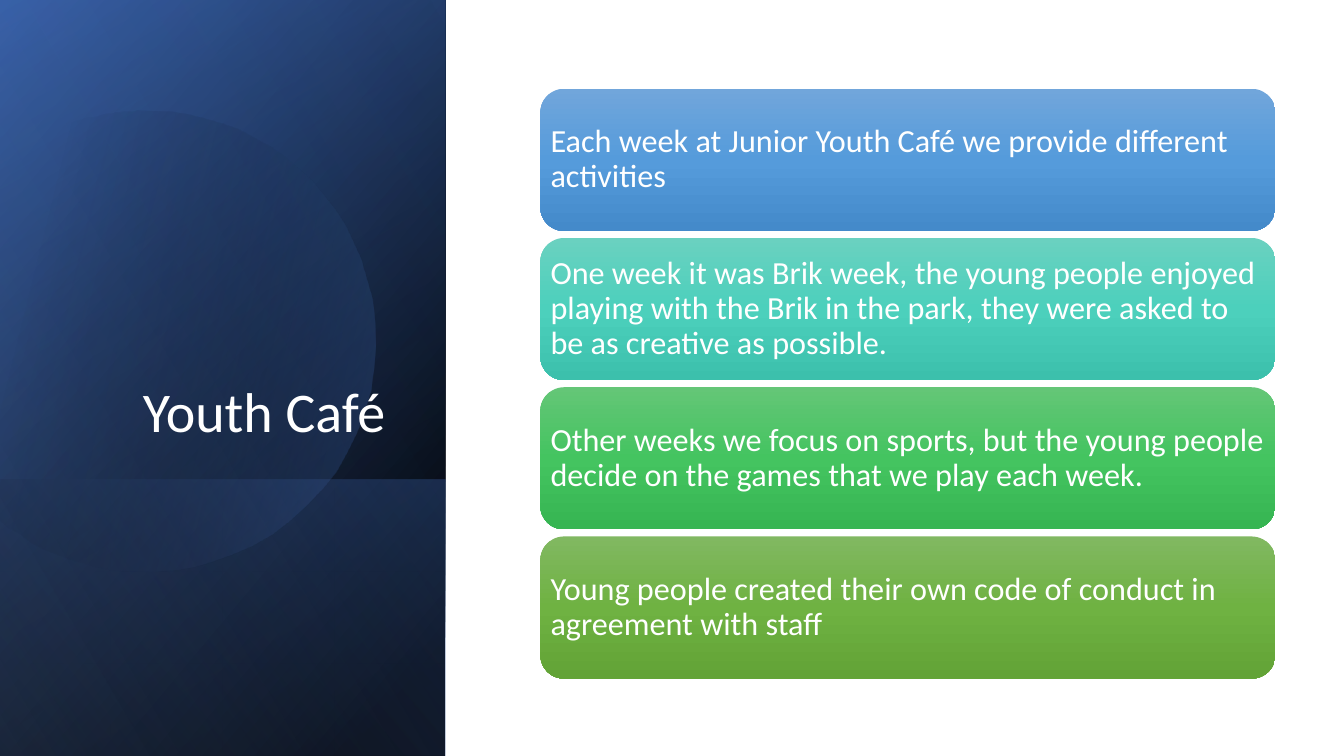
import math
import pptx
import pptx.util
import pptx.dml.color
import pptx.enum.shapes
import pptx.enum.text
import pptx.oxml
import pptx.oxml.ns

Pt = pptx.util.Pt
TITLE = "Youth Café "
COLORS = {"white": "FFFFFF", "black": "000000", "navy": "2F5597",
          "blue": "4472C4", "pale": "8FAADC"}
CARDS = [
    ("Each week at Junior Youth Café we provide different activities",
     ("71A6DB", "559BDB", "448ACA")),
    ("One week it was Brik week, the young people enjoyed playing with the "
     "Brik in the park, they were asked to be as creative as possible.",
     ("6AD1C0", "4CD0BC", "3CC0AC")),
    ("Other weeks we focus on sports, but the young people decide on the "
     "games that we play each week.",
     ("64C677", "44C460", "36B552")),
    ("Young people created their own code of conduct in agreement with staff",
     ("81B861", "6FB242", "62A336")),
]
PANEL_W, PANEL_H, FOOT_H = 318, 540, 197.3
VEILS = [
    (PANEL_H, 50, [(8, "black", 100), (100, "navy", 100)]),
    (PANEL_H, 30, [(0, "black", 0), (99, "blue", 46)]),
    (FOOT_H, 130, [(2, "blue", 29), (100, "black", 30)]),
    (PANEL_H, 120, [(0, "black", 0), (99, "pale", 11)]),
]
DISC_TURN, DISC_MID = -16.1, (114.1, 240.8)
DISC_ANGLE, DISC_STOPS = 30, [(29, "black", 0), (100, "blue", 43)]
DISC_START = (1.49, 1.1)
DISC_PARTS = [
    [(2.46, 1.12), (3.35, 1.77), (3.63, 2.75)],
    [(3.98, 3.97), (3.28, 5.23), (2.07, 5.58)],
    [(1.31, 5.8), (0.53, 5.61), (-0.03, 5.14)],
    [(-0.15, 5.03)],
    [(-0.15, 1.75)],
    [(0, 1.61)],
    [(0.23, 1.42), (0.5, 1.28), (0.8, 1.19)],
    [(1.03, 1.13), (1.26, 1.1), (1.49, 1.1)],
]
CARD_X, CARD_Y, CARD_W, CARD_H, CARD_STEP = 386, 63.4, 525, 101.5, 106.6


def shade(shape, angle, stops):
    shape.shadow.inherit = False
    shape.line.fill.background()
    shape.fill.background()
    marks = "".join(
        f'<a:gs pos="{place * 1000}"><a:srgbClr val="{tone}">'
        f'<a:alpha val="{alpha * 1000}"/></a:srgbClr></a:gs>'
        for place, tone, alpha in stops)
    grad = pptx.oxml.parse_xml(
        f'<a:gradFill {pptx.oxml.ns.nsdecls("a")} rotWithShape="1">'
        f'<a:gsLst>{marks}</a:gsLst>'
        f'<a:lin ang="{angle * 60000}" scaled="0"/></a:gradFill>')
    props = shape._element.spPr
    blank = props.find(pptx.oxml.ns.qn("a:noFill"))
    props.replace(blank, grad)


def named(stops):
    return [(place, COLORS[name], alpha) for place, name, alpha in stops]


def add_veil(shapes, height, angle, stops):
    left = (PANEL_W - height) / 2
    top = PANEL_H - (height + PANEL_W) / 2
    veil = shapes.add_shape(pptx.enum.shapes.MSO_SHAPE.RECTANGLE,
                            Pt(left), Pt(top), Pt(height), Pt(PANEL_W))
    veil.rotation = 90
    veil._element.spPr.xfrm.set("flipH", "1")
    shade(veil, angle, named(stops))


def trace(start, parts, steps=16):
    points = [start]
    for part in parts:
        if len(part) == 1:
            points += part
            continue
        knots = [points[-1]] + part
        for step in range(1, steps + 1):
            t = step / steps
            points.append(tuple(
                sum(math.comb(3, k) * t ** k * (1 - t) ** (3 - k) * knots[k][axis]
                    for k in range(4))
                for axis in (0, 1)))
    return points


def add_disc(shapes):
    turn = math.radians(-DISC_TURN)
    mid_x, mid_y = DISC_MID
    points = []
    for x, y in trace(DISC_START, DISC_PARTS):
        dx, dy = x * 72 - mid_x, y * 72 - mid_y
        points.append((mid_x + dx * math.cos(turn) - dy * math.sin(turn),
                       mid_y + dx * math.sin(turn) + dy * math.cos(turn)))
    pen = shapes.build_freeform(*points[0], scale=Pt(1))
    pen.add_line_segments(points[1:], close=True)
    disc = pen.convert_to_shape()
    disc.rotation = DISC_TURN
    shade(disc, DISC_ANGLE, named(DISC_STOPS))


def write(frame, text, size, align, anchor):
    frame.word_wrap = True
    frame.vertical_anchor = anchor
    line = frame.paragraphs[0]
    line.alignment = align
    line.line_spacing = 0.9
    run = line.add_run()
    run.text = text
    run.font.size = Pt(size)
    run.font.name = "Calibri"
    run.font.color.rgb = pptx.dml.color.RGBColor.from_string(COLORS["white"])


def add_card(shapes, row, text, tones):
    card = shapes.add_shape(pptx.enum.shapes.MSO_SHAPE.ROUNDED_RECTANGLE,
                            Pt(CARD_X), Pt(CARD_Y + row * CARD_STEP),
                            Pt(CARD_W), Pt(CARD_H))
    shade(card, 90, [(50 * k, tone, 100) for k, tone in enumerate(tones)])
    frame = card.text_frame
    frame.margin_left = frame.margin_right = Pt(2.3)
    frame.margin_top = frame.margin_bottom = Pt(2.3)
    write(frame, text, 23, pptx.enum.text.PP_ALIGN.LEFT,
          pptx.enum.text.MSO_ANCHOR.MIDDLE)


def main():
    deck = pptx.Presentation()
    deck.slide_width, deck.slide_height = Pt(960), Pt(540)
    slide = deck.slides.add_slide(deck.slide_layouts[5])
    shapes = slide.shapes
    title = shapes.title
    for veil in VEILS[:3]:
        add_veil(shapes, *veil)
    add_disc(shapes)
    add_veil(shapes, *VEILS[3])
    shapes._spTree.append(title._element)
    title.left, title.top = Pt(46), Pt(132.5)
    title.width, title.height = Pt(245.5), Pt(188.6)
    write(title.text_frame, TITLE, 40, pptx.enum.text.PP_ALIGN.RIGHT,
          pptx.enum.text.MSO_ANCHOR.BOTTOM)
    for row, (text, tones) in enumerate(CARDS):
        add_card(shapes, row, text, tones)
    deck.save("out.pptx")


if __name__ == "__main__":
    main()
